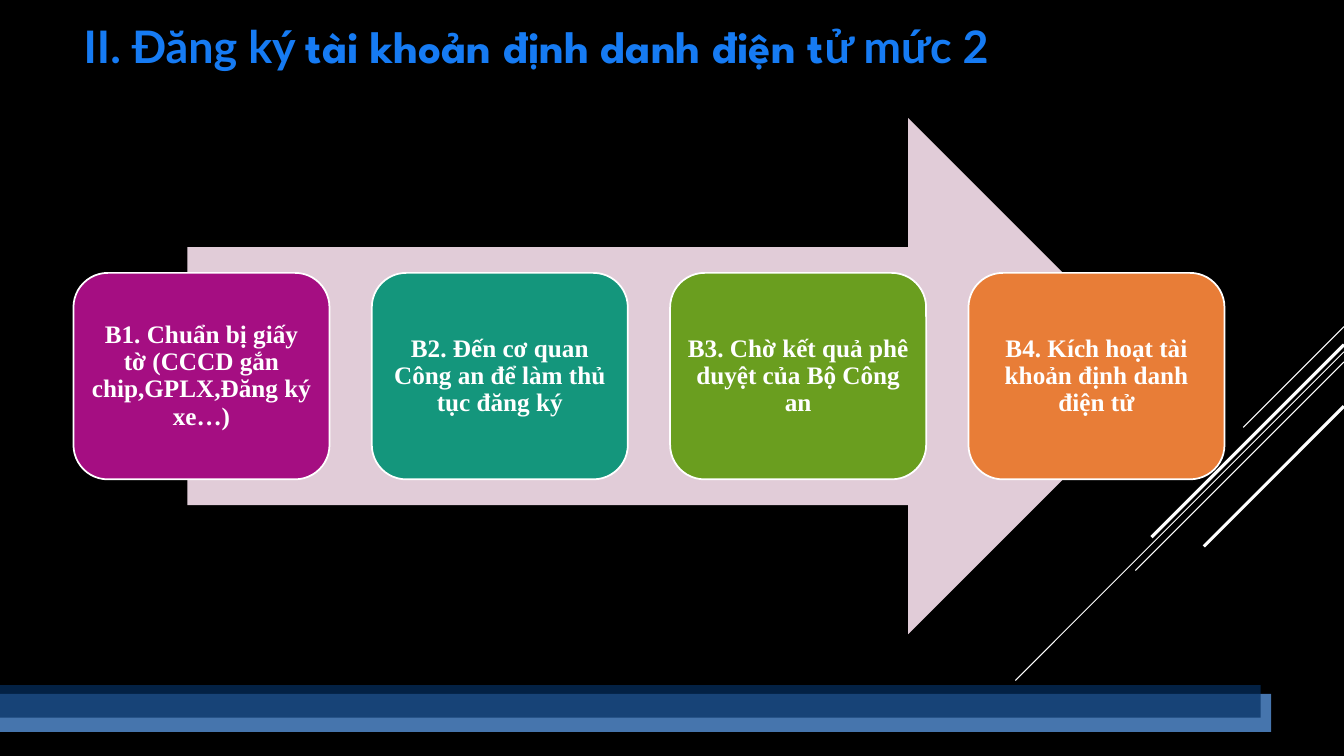
import pptx
import pptx.util
import pptx.dml.color
import pptx.enum.shapes
import pptx.enum.text
import pptx.oxml.ns
from lxml import etree

Pt = pptx.util.Pt
RGB = pptx.dml.color.RGBColor.from_string
SHAPE = pptx.enum.shapes.MSO_SHAPE
ALIGN = pptx.enum.text.PP_ALIGN
ANCHOR = pptx.enum.text.MSO_ANCHOR
qn = pptx.oxml.ns.qn

THEME = {
    "background": "000000",
    "white": "FFFFFF",
    "title": "167BF3",
    "arrow": "E1CCD8",
    "light_bar": "64A7F7",
    "dark_bar": "052F61",
    "steps": ["A50E82", "14967C", "6A9E1F", "E87D37"],
    "title_size": Pt(32),
    "step_size": Pt(18),
}
SLIDE_WIDTH, SLIDE_HEIGHT = 960, 540

presentation = pptx.Presentation()
presentation.slide_width = Pt(SLIDE_WIDTH)
presentation.slide_height = Pt(SLIDE_HEIGHT)
slide = presentation.slides.add_slide(presentation.slide_layouts[5])
slide.background.fill.solid()
slide.background.fill.fore_color.rgb = RGB(THEME["background"])


def add_filled_shape(kind, left, top, width, height, color):
    shape = slide.shapes.add_shape(kind, Pt(left), Pt(top), Pt(width), Pt(height))
    shape.shadow.inherit = False
    shape.fill.solid()
    shape.fill.fore_color.rgb = RGB(color)
    shape.line.fill.background()
    return shape


# Diagonal lines: each leaves the right edge at 45 degrees (top, run, weight)
diagonals = [
    (233.3, 72, 0.75),
    (251.3, 234.7, 0.75),
    (258.5, 149, 0.75),
    (246.2, 137.5, 2.25),
    (290.2, 100.1, 2.25),
]
for top, run_length, weight in diagonals:
    diagonal = slide.shapes.add_connector(
        pptx.enum.shapes.MSO_CONNECTOR.STRAIGHT,
        Pt(SLIDE_WIDTH), Pt(top), Pt(SLIDE_WIDTH - run_length), Pt(top + run_length))
    diagonal.line.color.rgb = RGB(THEME["white"])
    diagonal.line.width = Pt(weight)
    etree.SubElement(diagonal._element.spPr, qn("a:effectLst"))

# Translucent footer bars
footer_bars = [
    (495.6, 907.9, 27.2, "light_bar", 70),
    (489.4, 900.5, 23.2, "dark_bar", 71),
]
for top, width, height, color_name, opacity in footer_bars:
    bar = add_filled_shape(SHAPE.RECTANGLE, 0, top, width, height, THEME[color_name])
    color = bar._element.spPr.find(qn("a:solidFill")).find(qn("a:srgbClr"))
    etree.SubElement(color, qn("a:alpha"), val=str(opacity * 1000))

# Title
title = slide.shapes.title
title.left, title.top, title.width, title.height = Pt(59.8), Pt(16.6), Pt(888), Pt(31)
frame = title.text_frame
frame.margin_left = frame.margin_top = frame.margin_right = frame.margin_bottom = 0
frame.vertical_anchor = ANCHOR.TOP
frame.auto_size = pptx.enum.text.MSO_AUTO_SIZE.NONE
paragraph = frame.paragraphs[0]
paragraph.alignment = ALIGN.LEFT
paragraph.line_spacing = 0.93
paragraph.space_before = Pt(0)
paragraph.font.size = THEME["title_size"]
paragraph.font.bold = True
paragraph.font.color.rgb = RGB(THEME["title"])
for text, font_name in [
    ("II. Đăng ký ", "Lato"),
    ("tài khoản định danh điện t", "League Spartan"),
    ("ử mức 2", "Lato"),
]:
    run = paragraph.add_run()
    run.text = text
    run.font.name = font_name

# Process arrow and its four steps
add_filled_shape(SHAPE.RIGHT_ARROW, 133.9, 84.4, 699.1, 368.6, THEME["arrow"])

steps = [
    "B1. Chuẩn bị giấy tờ (CCCD gắn chip,GPLX,Đăng ký xe…)",
    "B2. Đến cơ quan Công an để làm thủ tục đăng ký",
    "B3. Chờ kết quả phê duyệt của Bộ Công an",
    "B4. Kích hoạt tài khoản định danh điện tử",
]
STEP_LEFT, STEP_PITCH = 52.5, 213.1
for index, (text, color) in enumerate(zip(steps, THEME["steps"])):
    step = add_filled_shape(SHAPE.ROUNDED_RECTANGLE, STEP_LEFT + index * STEP_PITCH,
                            194.9, 182.9, 147.5, color)
    step.line.color.rgb = RGB(THEME["white"])
    step.line.width = Pt(1.25)
    frame = step.text_frame
    frame.word_wrap = True
    frame.vertical_anchor = ANCHOR.MIDDLE
    frame.margin_left = frame.margin_top = frame.margin_right = frame.margin_bottom = Pt(5.4)
    paragraph = frame.paragraphs[0]
    paragraph.text = text
    paragraph.alignment = ALIGN.CENTER
    paragraph.line_spacing = 0.9
    paragraph.font.name = "Times New Roman"
    paragraph.font.size = THEME["step_size"]
    paragraph.font.bold = True
    paragraph.font.color.rgb = RGB(THEME["white"])

presentation.save("out.pptx")
